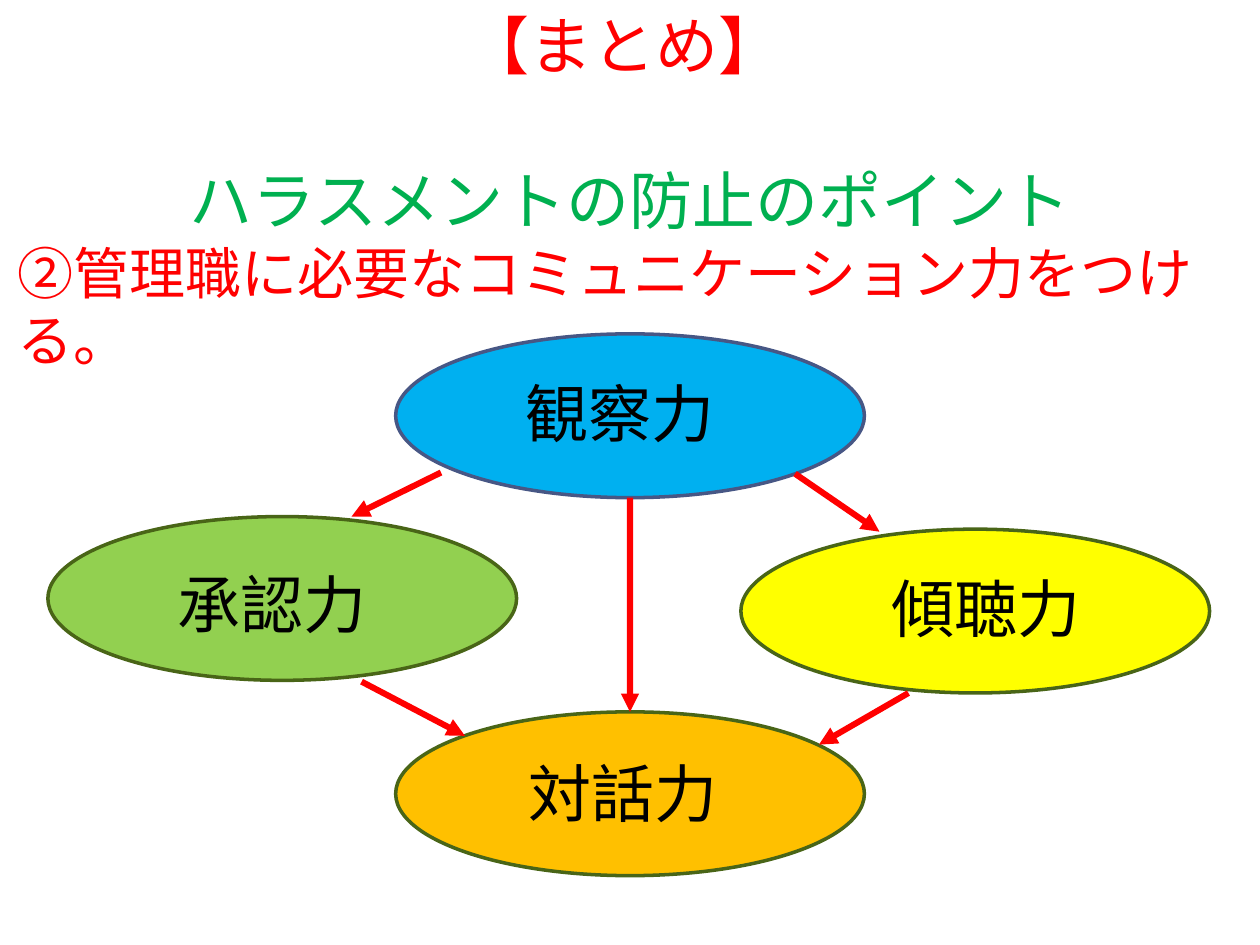
from lxml.etree import SubElement
from pptx import Presentation
from pptx.dml.color import RGBColor
from pptx.enum.shapes import MSO_CONNECTOR, MSO_SHAPE
from pptx.enum.text import MSO_ANCHOR, PP_ALIGN as AL
from pptx.oxml.ns import qn
from pptx.util import Inches as I, Pt

FONT = "Noto Sans CJK JP"
BLACK = RGBColor(0x00, 0x00, 0x00)
RED = RGBColor(0xFF, 0x00, 0x00)
GREEN = RGBColor(0x00, 0xB0, 0x50)
BLUE = RGBColor(0x00, 0xB0, 0xF0)
ORANGE = RGBColor(0xFF, 0xC0, 0x00)
YELLOW = RGBColor(0xFF, 0xFF, 0x00)
LIME = RGBColor(0x92, 0xD0, 0x50)
NAVY_EDGE = RGBColor(0x47, 0x57, 0x85)
OLIVE_EDGE = RGBColor(0x49, 0x65, 0x17)

W, H = 10, 7.5
OVAL_W, OVAL_H = 3.72, 1.3
LABEL_W, LABEL_H = 1.86, 0.76
MID = (W - OVAL_W) / 2

# Skill: oval left, oval top, fill, edge, label left, label top
SKILLS = {
    "観察力": (MID, 2.65, BLUE, NAVY_EDGE, 4.07, 2.92),
    "対話力": (MID, 5.65, ORANGE, OLIVE_EDGE, 4.1, 5.94),
    "傾聴力": (5.88, 4.2, YELLOW, OLIVE_EDGE, 6.98, 4.47),
    "承認力": (0.38, 4.1, LIME, OLIVE_EDGE, 1.31, 4.44),
}
# Slanted arrows between neighbouring ovals: x1, y1, x2, y2
SLANTED = [
    (7.21, 5.5, 6.5, 5.91),
    (2.87, 5.41, 3.69, 5.84),
    (3.5, 3.75, 2.79, 4.1),
    (6.31, 3.76, 6.98, 4.22),
]


def add_box(s, x, y, w, h):
    tf = s.shapes.add_textbox(I(x), I(y), I(w), I(h)).text_frame
    tf.word_wrap = True
    tf.vertical_anchor = MSO_ANCHOR.TOP
    return tf


def write(p, text, size=36, color=BLACK, align=AL.LEFT, before=0):
    p.alignment = align
    p.space_before = Pt(before)
    r = p.add_run()
    r.text = text
    r.font.size = Pt(size)
    r.font.name = FONT
    r.font.color.rgb = color
    SubElement(r.font._element, qn("a:ea")).set("typeface", FONT)


def add_oval(s, x, y, fill, edge):
    sp = s.shapes.add_shape(MSO_SHAPE.OVAL, I(x), I(y), I(OVAL_W), I(OVAL_H))
    sp.shadow.inherit = False
    sp.fill.solid()
    sp.fill.fore_color.rgb = fill
    sp.line.color.rgb = edge
    sp.line.width = Pt(2)
    return sp


def add_arrow(s, x1, y1, x2, y2):
    cxn = s.shapes.add_connector(MSO_CONNECTOR.STRAIGHT, I(x1), I(y1), I(x2), I(y2))
    cxn.line.color.rgb = RED
    cxn.line.width = Pt(3.5)
    SubElement(cxn.line._get_or_add_ln(), qn("a:tailEnd")).set("type", "triangle")
    SubElement(cxn._element.spPr, qn("a:effectLst"))
    return cxn


def main():
    prs = Presentation()
    prs.slide_width, prs.slide_height = I(W), I(H)
    s = prs.slides.add_slide(prs.slide_layouts[6])

    # Heading and key point
    body = add_box(s, 0.04, 1.23, 9.92, 5.98)
    write(body.paragraphs[0], "ハラスメントの防止のポイント", color=GREEN,
          align=AL.CENTER, before=5.4)
    write(body.add_paragraph(), "②管理職に必要なコミュニケーション力をつける。",
          size=32, color=RED, before=0.8)
    title = add_box(s, 0.83, 0, 8.25, 0.92)
    write(title.paragraphs[0], "【まとめ】", color=RED, align=AL.CENTER)

    # Skill ovals, then their labels
    ovals = {name: add_oval(s, *look) for name, (*look, _, _) in SKILLS.items()}
    for name, (*_, x, y) in SKILLS.items():
        write(add_box(s, x, y, LABEL_W, LABEL_H).paragraphs[0], name)

    # Arrows
    for ends in SLANTED:
        add_arrow(s, *ends)
    top, bottom = SKILLS["観察力"][1] + OVAL_H, SKILLS["対話力"][1]
    add_arrow(s, W / 2, top, W / 2, bottom).end_connect(ovals["対話力"], 0)

    prs.save("out.pptx")


if __name__ == "__main__":
    main()
